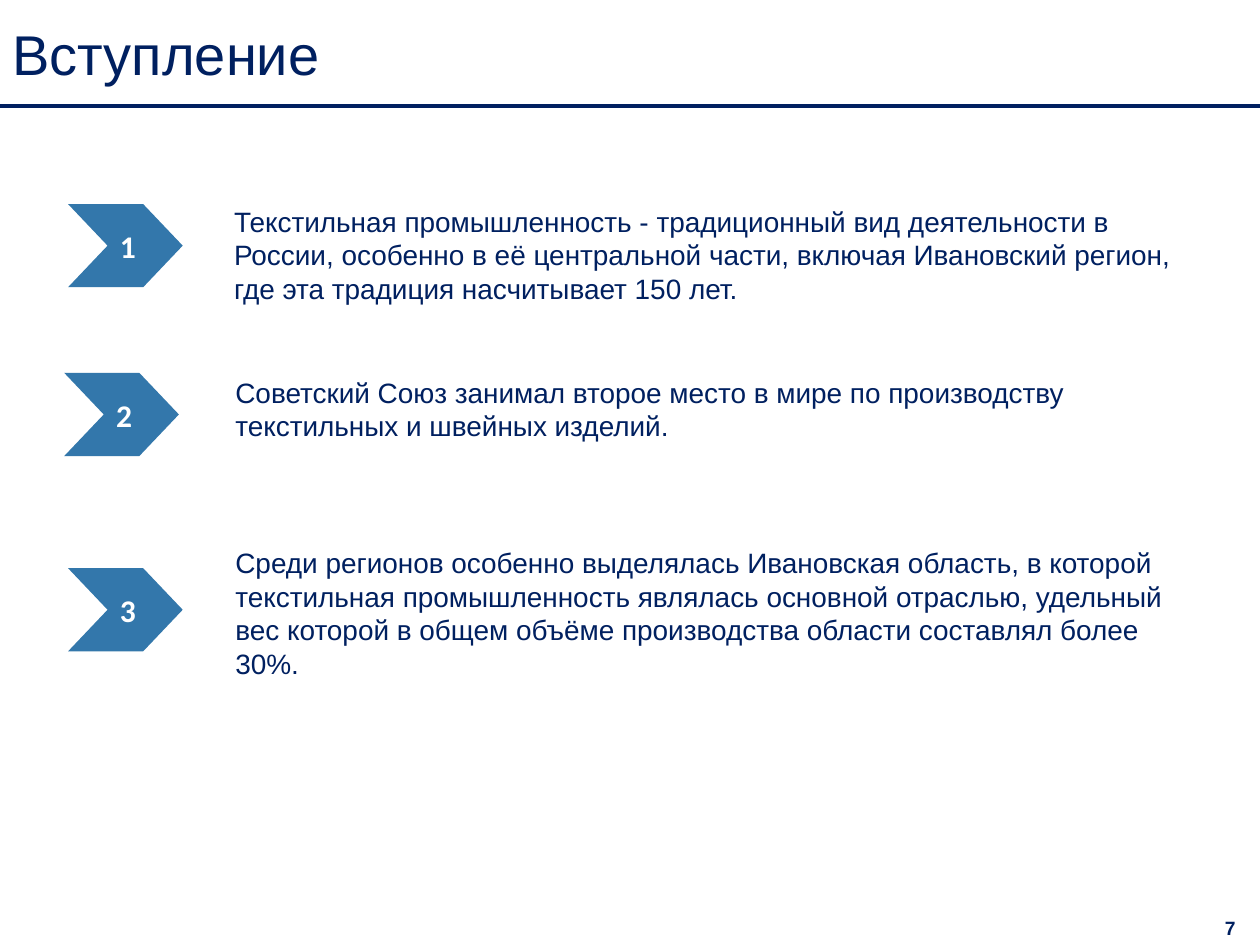
from dataclasses import dataclass

import lxml.etree
import pptx
import pptx.dml.color
import pptx.enum.shapes
import pptx.enum.text
import pptx.oxml.ns
import pptx.util

SLIDE_WIDTH, SLIDE_HEIGHT = 10, 7.5
HEADER_HEIGHT = 0.84
CHEVRON_WIDTH, CHEVRON_HEIGHT = 0.91, 0.66
TEXT_WIDTH = 7.64
NAVY, BLUE, WHITE = "002060", "005696", "FFFFFF"
ANCHOR = pptx.enum.text.MSO_ANCHOR
ALIGN = pptx.enum.text.PP_ALIGN


@dataclass(frozen=True)
class Point:
    """A numbered statement: chevron corner, text corner and text height in inches."""
    chevron_left: float
    chevron_top: float
    text_left: float
    text_top: float
    text_height: float
    text: str


POINTS = [
    Point(0.54, 1.62, 1.76, 1.57, 0.91,
          "Текстильная промышленность - традиционный вид деятельности в России, "
          "особенно в её центральной части, включая Ивановский регион, "
          "где эта традиция насчитывает 150 лет."),
    Point(0.51, 2.96, 1.77, 2.93, 0.64,
          "Советский Союз занимал второе место в мире по производству "
          "текстильных и швейных изделий."),
    Point(0.54, 4.51, 1.77, 4.28, 1.18,
          "Среди регионов особенно выделялась Ивановская область, в которой "
          "текстильная промышленность являлась основной отраслью, удельный вес "
          "которой в общем объёме производства области составлял более 30%."),
]


def color(value: str) -> pptx.dml.color.RGBColor:
    return pptx.dml.color.RGBColor.from_string(value)


def box(left: float, top: float, width: float, height: float) -> list:
    return [pptx.util.Inches(length) for length in (left, top, width, height)]


def write(shape, text: str, *, size: float, font: str = "Arial", fill: str = NAVY,
          bold: bool = False, align=ALIGN.LEFT, anchor=ANCHOR.TOP,
          wrap: bool = True) -> None:
    frame = shape.text_frame
    frame.word_wrap = wrap
    frame.vertical_anchor = anchor
    paragraph = frame.paragraphs[0]
    paragraph.alignment = align
    run = paragraph.add_run()
    run.text = text
    run.font.size = pptx.util.Pt(size)
    run.font.name = font
    run.font.bold = bold
    run.font.color.rgb = color(fill)


def add_rule(slide, top: float) -> None:
    line = slide.shapes.add_connector(
        pptx.enum.shapes.MSO_CONNECTOR.STRAIGHT, 0, pptx.util.Inches(top),
        pptx.util.Inches(SLIDE_WIDTH), pptx.util.Inches(top))
    line.line.color.rgb = color(NAVY)
    line.line.width = pptx.util.Pt(2)
    lxml.etree.SubElement(line._element.spPr, pptx.oxml.ns.qn("a:effectLst"))


def add_chevron(slide, point: Point, number: int) -> None:
    chevron = slide.shapes.add_shape(
        pptx.enum.shapes.MSO_SHAPE.CHEVRON,
        *box(point.chevron_left, point.chevron_top, CHEVRON_WIDTH, CHEVRON_HEIGHT))
    chevron.adjustments[0] = 0.475
    chevron.shadow.inherit = False
    chevron.line.fill.background()
    chevron.fill.solid()
    chevron.fill.fore_color.rgb = color(BLUE)
    # Let the white background show through the fill
    fill_color = chevron._element.spPr.find(".//" + pptx.oxml.ns.qn("a:srgbClr"))
    lxml.etree.SubElement(fill_color, pptx.oxml.ns.qn("a:alpha"), val="80000")
    write(chevron, str(number), size=18, font="Calibri", fill=WHITE, bold=True,
          anchor=ANCHOR.MIDDLE, wrap=False)


def add_text(slide, area: list, text: str, **text_format) -> None:
    write(slide.shapes.add_textbox(*area), text, **text_format)


def main() -> None:
    presentation = pptx.Presentation()
    presentation.slide_width = pptx.util.Inches(SLIDE_WIDTH)
    presentation.slide_height = pptx.util.Inches(SLIDE_HEIGHT)
    slide = presentation.slides.add_slide(presentation.slide_layouts[6])

    # Header
    add_rule(slide, HEADER_HEIGHT)
    add_text(slide, box(0, 0, 6.81, HEADER_HEIGHT), "Вступление", size=32,
             anchor=ANCHOR.MIDDLE)

    # Numbered statements
    for number, point in enumerate(POINTS, start=1):
        add_chevron(slide, point, number)
        add_text(slide, box(point.text_left, point.text_top, TEXT_WIDTH,
                            point.text_height), point.text, size=16)

    # Page number
    add_text(slide, box(9.53, 7.22, 0.47, 0.29), "7", size=11, bold=True,
             align=ALIGN.CENTER)

    presentation.save("out.pptx")


if __name__ == "__main__":
    main()
